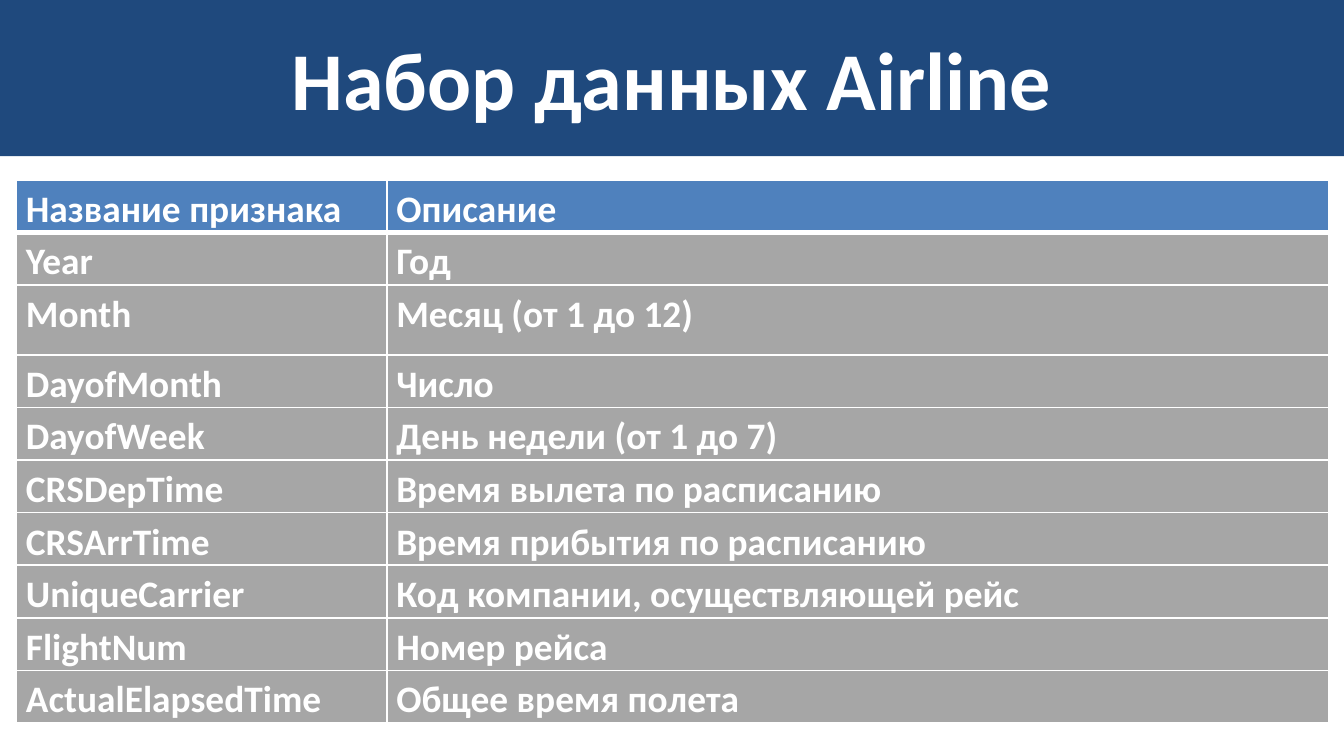
from pptx import Presentation
from pptx.dml.color import RGBColor
from pptx.enum.text import MSO_ANCHOR, MSO_AUTO_SIZE, PP_ALIGN
from pptx.oxml.ns import qn
from pptx.util import Cm, Pt
from lxml.etree import SubElement

WHITE = "FFFFFF"
NAVY = "1F497D"
BLUE = "4F81BD"
GRAY = "A6A6A6"

ROWS = [
    ("Название признака", "Описание"),
    ("Year", "Год"),
    ("Month", "Месяц (от 1 до 12)"),
    ("DayofMonth", "Число"),
    ("DayofWeek", "День недели (от 1 до 7)"),
    ("CRSDepTime", "Время вылета по расписанию"),
    ("CRSArrTime", "Время прибытия по расписанию"),
    ("UniqueCarrier", "Код компании, осуществляющей рейс"),
    ("FlightNum", "Номер рейса"),
    ("ActualElapsedTime", "Общее время полета"),
]


def paint(fill, color):
    fill.solid()
    fill.fore_color.rgb = RGBColor.from_string(color)


def style(para, size):
    for run in para.runs:
        font = run.font
        font.name = "Calibri"
        font.size = Pt(size)
        font.bold = True
        font.color.rgb = RGBColor.from_string(WHITE)


def add_title(slide, text):
    title = slide.shapes.title
    title.left, title.top = Cm(0), Cm(0)
    title.width, title.height = Cm(25.4), Cm(2.95)
    paint(title.fill, NAVY)
    frame = title.text_frame
    frame.text = text
    frame.auto_size = MSO_AUTO_SIZE.NONE
    frame.vertical_anchor = MSO_ANCHOR.MIDDLE
    para = frame.paragraphs[0]
    para.alignment = PP_ALIGN.CENTER
    style(para, 44)


def add_edges(cell, top, bottom):
    props = cell._tc.get_or_add_tcPr()
    for side, width in zip("LRTB", (1, 1, top, bottom)):
        line = SubElement(props, qn(f"a:ln{side}"), w=str(Pt(width)))
        fill = SubElement(line, qn("a:solidFill"))
        SubElement(fill, qn("a:srgbClr"), val=WHITE)


def fill_cell(cell, text, row):
    add_edges(cell, 3 if row == 1 else 1, 3 if row == 0 else 1)
    paint(cell.fill, GRAY if row else BLUE)
    cell.margin_left = cell.margin_right = Cm(0.18)
    cell.margin_top = cell.margin_bottom = Cm(0)
    cell.text = text
    para = cell.text_frame.paragraphs[0]
    para.line_spacing = 1.15
    para.space_after = Pt(6)
    style(para, 20)


def add_grid(slide):
    frame = slide.shapes.add_table(
        len(ROWS), 2, Cm(0.31), Cm(3.4), Cm(24.8), Cm(10.08)
    )
    table = frame.table
    for col, width in zip(table.columns, (7, 17.8)):
        col.width = Cm(width)
    for row, texts in enumerate(ROWS):
        table.rows[row].height = Cm(1.32 if texts[0] == "Month" else 0.66)
        for col, text in enumerate(texts):
            fill_cell(table.cell(row, col), text, row)
    frame.height = Cm(10.08)


def main():
    deck = Presentation()
    deck.slide_width, deck.slide_height = Cm(25.4), Cm(14.29)
    slide = deck.slides.add_slide(deck.slide_layouts[5])
    add_title(slide, "Набор данных Airline")
    add_grid(slide)
    deck.save("out.pptx")


if __name__ == "__main__":
    main()
